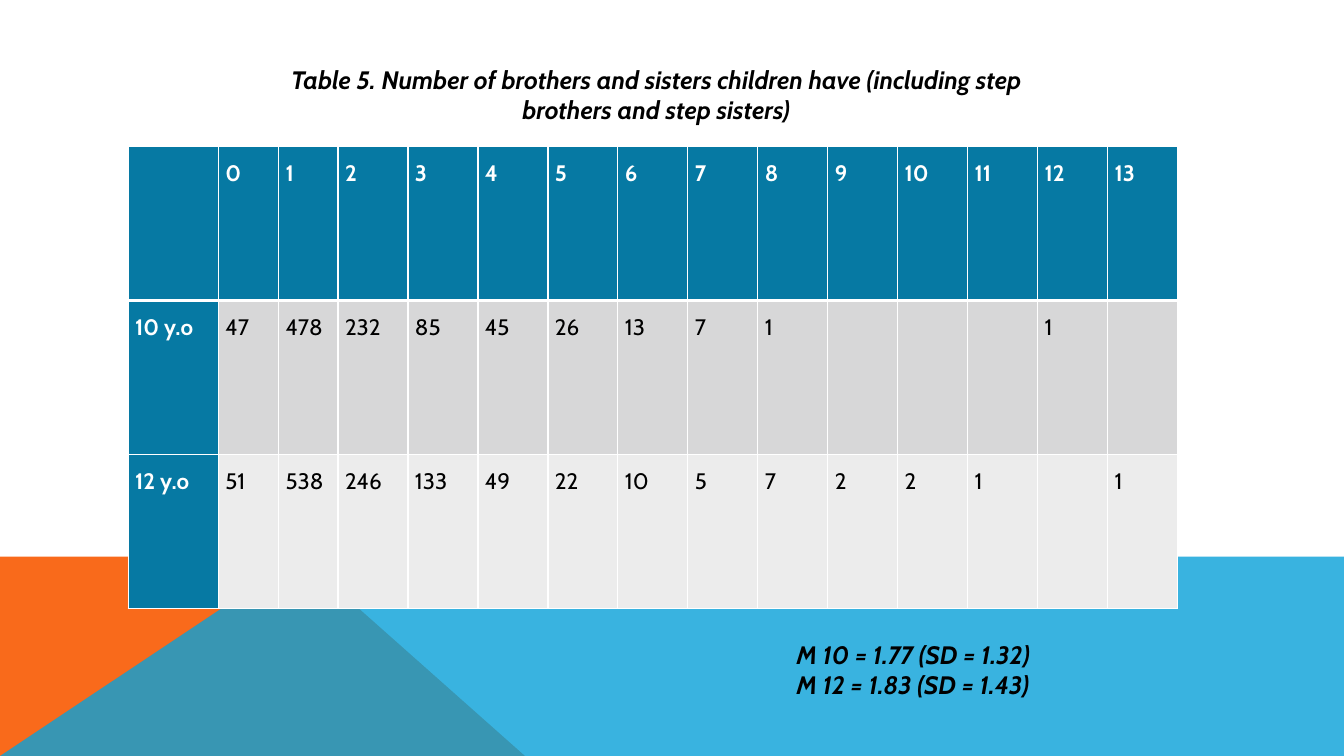
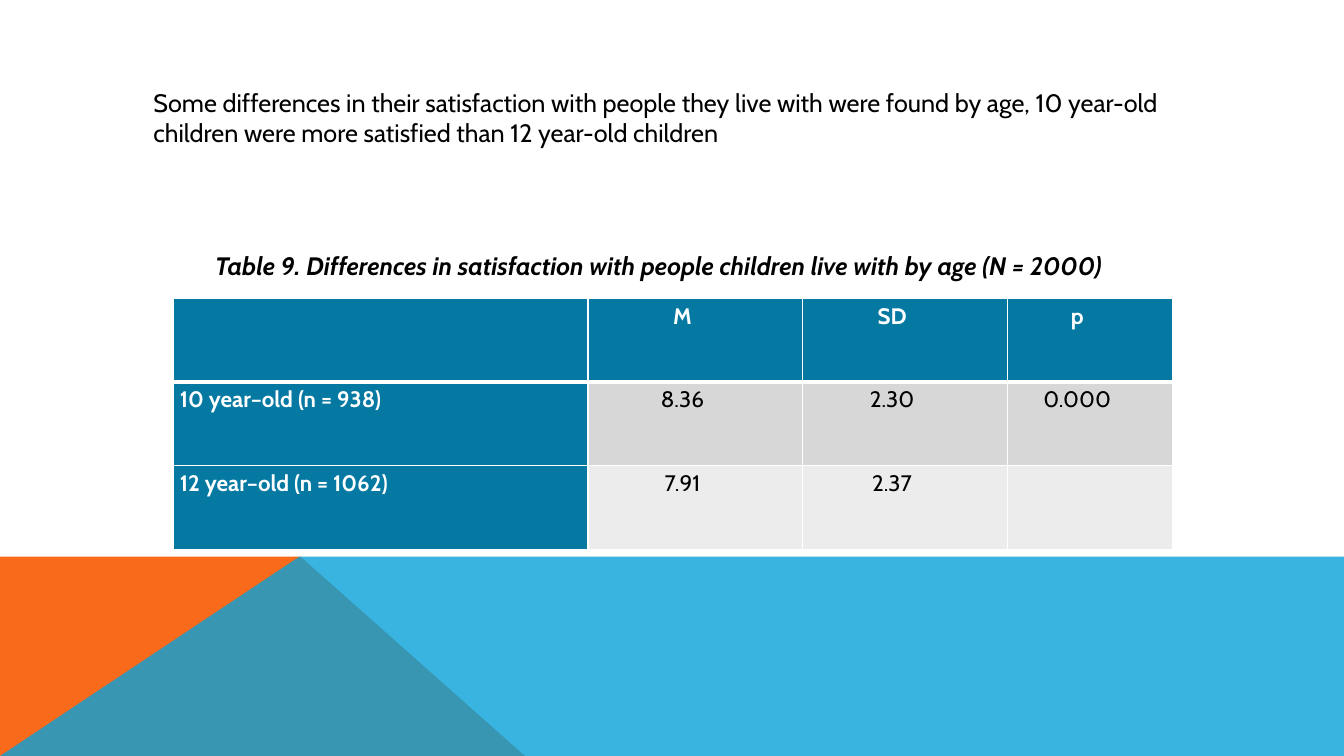
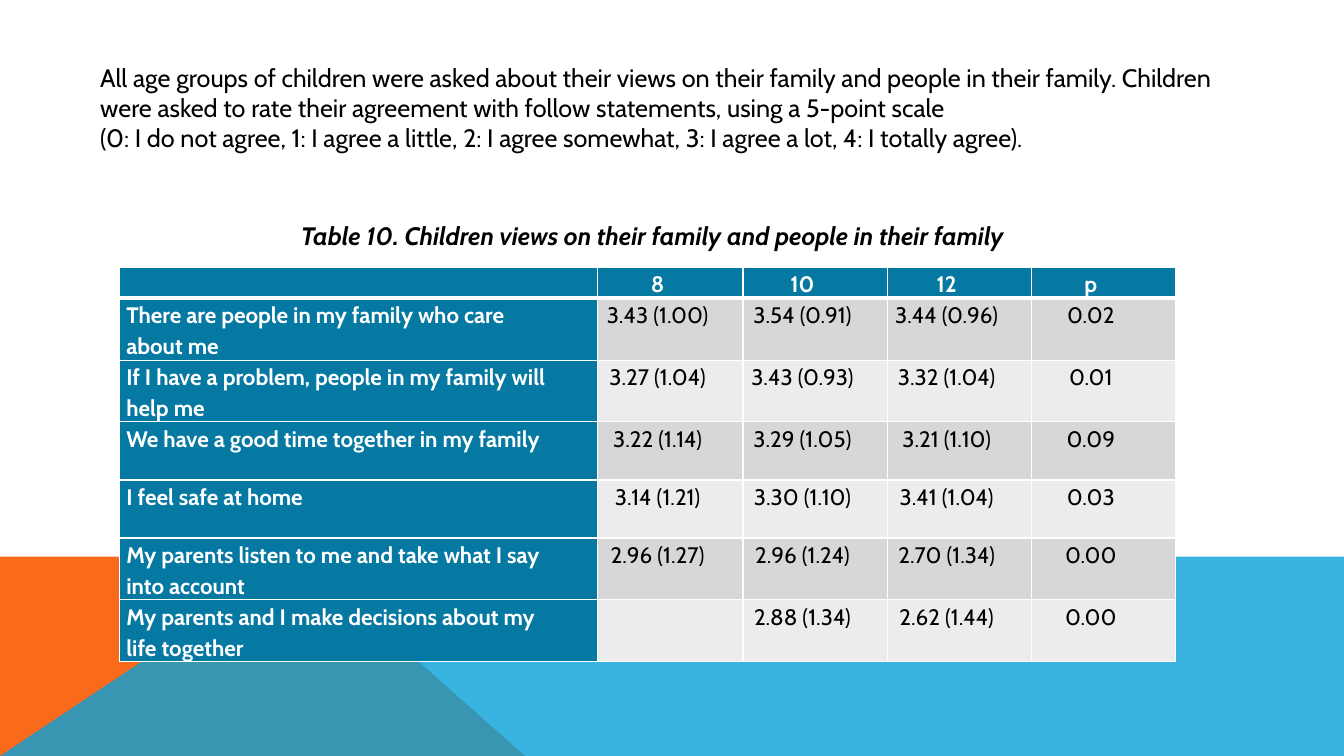
from lxml import etree
from pptx import Presentation
from pptx.dml.color import RGBColor
from pptx.enum.text import MSO_ANCHOR, MSO_AUTO_SIZE, PP_ALIGN
from pptx.oxml.ns import qn
from pptx.util import Pt

BLACK = RGBColor(0x00, 0x00, 0x00)
WHITE = RGBColor(0xFF, 0xFF, 0xFF)
ORANGE = RGBColor(0xF9, 0x6A, 0x1B)
SKY = RGBColor(0x08, 0xA1, 0xD9)
TEAL = RGBColor(0x06, 0x79, 0xA3)
ROW_FILLS = (RGBColor(0xD7, 0xD7, 0xD8), RGBColor(0xEC, 0xEC, 0xEC))

PAGE_WIDTH, PAGE_HEIGHT, BAND_TOP = 960, 540, 397.5
ORANGE_BAND = [(0, PAGE_HEIGHT), (0, BAND_TOP), (214.5, BAND_TOP), (375, PAGE_HEIGHT)]
SKY_BAND = [(0, PAGE_HEIGHT), (214, BAND_TOP), (PAGE_WIDTH, BAND_TOP),
            (PAGE_WIDTH, PAGE_HEIGHT)]


class Deck:
    """Holds the shared style and the current slide."""

    font = "Cabin"
    text_size = 18
    cell_size = 16

    def __init__(self):
        self.presentation = Presentation()
        self.presentation.slide_width = Pt(PAGE_WIDTH)
        self.presentation.slide_height = Pt(PAGE_HEIGHT)
        self.layout = self.presentation.slide_layouts[5]
        self.slide = None

    def new_slide(self):
        self.slide = self.presentation.slides.add_slide(self.layout)

    def layout_band(self, points, color, opacity=100):
        """Draw a polygon and move it to the layout, so every slide shows it."""
        corners = [(Pt(x), Pt(y)) for x, y in points]
        builder = self.slide.shapes.build_freeform(*corners[0])
        builder.add_line_segments(corners[1:], close=True)
        shape = builder.convert_to_shape()
        shape.shadow.inherit = False
        shape.line.fill.background()
        shape.fill.solid()
        shape.fill.fore_color.rgb = color
        if opacity < 100:
            fill_color = shape.element.spPr.find(qn("a:solidFill"))[0]
            etree.SubElement(fill_color, qn("a:alpha"), val=str(opacity * 1000))
        self.layout.shapes.element.append(shape.element)

    def format_runs(self, paragraph, size, color=BLACK, bold=False, italic=False):
        for run in paragraph.runs:
            run.font.name = self.font
            run.font.size = Pt(size)
            run.font.color.rgb = color
            run.font.bold = bold
            run.font.italic = italic

    def fill_text(self, shape, text, align, emphasis):
        text_frame = shape.text_frame
        text_frame.text = text
        text_frame.word_wrap = True
        text_frame.vertical_anchor = MSO_ANCHOR.TOP
        text_frame.auto_size = MSO_AUTO_SIZE.SHAPE_TO_FIT_TEXT
        for paragraph in text_frame.paragraphs:
            paragraph.alignment = align
            self.format_runs(paragraph, self.text_size, bold=emphasis, italic=emphasis)

    def caption(self, text, left, top, width, height, align=PP_ALIGN.CENTER):
        title = self.slide.shapes.title
        title.left, title.top = Pt(left), Pt(top)
        title.width, title.height = Pt(width), Pt(height)
        self.fill_text(title, text, align, emphasis=True)

    def text(self, text, left, top, width, height, emphasis=False):
        box = self.slide.shapes.add_textbox(Pt(left), Pt(top), Pt(width), Pt(height))
        self.fill_text(box, text, PP_ALIGN.LEFT, emphasis)

    def table(self, rows, left, top, widths, heights, align=PP_ALIGN.CENTER,
              line_spacing=1.15, space_before=0.6, right_indent=18):
        table = self.slide.shapes.add_table(
            len(rows), len(widths), Pt(left), Pt(top),
            Pt(sum(widths)), Pt(sum(heights))).table
        table.first_col = True
        for column, width in zip(table.columns, widths):
            column.width = Pt(width)
        for row, height in zip(table.rows, heights):
            row.height = Pt(height)
        for row_index, values in enumerate(rows):
            for column_index, value in enumerate(values):
                cell = table.cell(row_index, column_index)
                is_heading = row_index == 0 or column_index == 0
                cell.margin_left = cell.margin_right = Pt(5)
                cell.margin_top = cell.margin_bottom = 0
                cell.fill.solid()
                cell.fill.fore_color.rgb = (
                    TEAL if is_heading else ROW_FILLS[(row_index - 1) % 2])
                self.cell_borders(cell, row_index)
                if not value:
                    continue
                cell.text_frame.text = value
                paragraph = cell.text_frame.paragraphs[0]
                paragraph.alignment = align if column_index else PP_ALIGN.LEFT
                paragraph.line_spacing = line_spacing
                paragraph.space_before = Pt(space_before)
                paragraph._p.get_or_add_pPr().set("marR", str(Pt(right_indent)))
                self.format_runs(paragraph, self.cell_size,
                                 WHITE if is_heading else BLACK, bold=is_heading)

    def cell_borders(self, cell, row_index):
        """White grid lines, with a thick one below the header row."""
        top = 3 if row_index == 1 else 1
        bottom = 3 if row_index == 0 else 1
        sides = (("lnL", 1), ("lnR", 1), ("lnT", top), ("lnB", bottom))
        properties = cell._tc.get_or_add_tcPr()
        for position, (side, width) in enumerate(sides):
            line = etree.Element(qn(f"a:{side}"), w=str(Pt(width)))
            fill = etree.SubElement(line, qn("a:solidFill"))
            etree.SubElement(fill, qn("a:srgbClr"), val=str(WHITE))
            properties.insert(position, line)


def main():
    deck = Deck()

    # Number of siblings
    deck.new_slide()
    deck.layout_band(ORANGE_BAND, ORANGE)
    deck.layout_band(SKY_BAND, SKY, opacity=80)
    deck.caption("Table 5. Number of brothers and sisters children have "
                 "(including step brothers and step sisters)", 188, 42.5, 561.5, 51)
    sibling_rows = [
        [""] + [str(count) for count in range(14)],
        ["10 y.o", "47", "478", "232", "85", "45", "26", "13", "7", "1",
         "", "", "", "1", ""],
        ["12 y.o", "51", "538", "246", "133", "49", "22", "10", "5", "7",
         "2", "2", "1", "", "1"],
    ]
    deck.table(sibling_rows, 91.5, 104.75, [64.5, 43, 42.5] + [50] * 12, [110] * 3,
               align=PP_ALIGN.LEFT, line_spacing=1.5, space_before=0, right_indent=0)
    deck.text("M 10 = 1.77 (SD = 1.32)\nM 12 = 1.83 (SD = 1.43)",
              562, 453, 353, 51, emphasis=True)

    # Satisfaction by age
    deck.new_slide()
    deck.text("Some differences in their satisfaction with people they live with were "
              "found by age, 10 year-old children were more satisfied than 12 year-old "
              "children", 102.5, 59, 754, 51)
    deck.caption("Table 9. Differences in satisfaction with people children live with "
                 "by age (N = 2000)", 146.5, 175, 666, 29, align=PP_ALIGN.LEFT)
    satisfaction_rows = [
        ["", "M", "SD", "p"],
        ["10 year–old (n = 938)", "8.36", "2.30", "0.000"],
        ["12 year–old (n = 1062)", "7.91", "2.37", ""],
    ]
    deck.table(satisfaction_rows, 123.5, 213.25, [296.5, 153, 146.5, 118], [59.75] * 3)

    # Views on the family
    deck.new_slide()
    deck.text("All age groups of children were asked about their views on their family "
              "and people in their family. Children were asked to rate their agreement "
              "with follow statements, using a 5-point scale\n"
              "(0: I do not agree, 1: I agree a little, 2: I agree somewhat, "
              "3: I agree a lot, 4: I totally agree).", 64.5, 41, 821.5, 72.5)
    deck.caption("Table 10. Children views on their family and people in their family",
                 93, 153.5, 746, 29)
    family_rows = [
        ["", "8", "10", "12", "p"],
        ["There are people in my family who care about me",
         "3.43 (1.00)", "3.54 (0.91)", "3.44 (0.96)", "0.02"],
        ["If I have a problem, people in my family will help me",
         "3.27 (1.04)", "3.43 (0.93)", "3.32 (1.04)", "0.01"],
        ["We have a good time together in my family",
         "3.22 (1.14)", "3.29 (1.05)", "3.21 (1.10)", "0.09"],
        ["I feel safe at home",
         "3.14 (1.21)", "3.30 (1.10)", "3.41 (1.04)", "0.03"],
        ["My parents listen to me and take what I say into account",
         "2.96 (1.27)", "2.96 (1.24)", "2.70 (1.34)", "0.00"],
        ["My parents and I make decisions about my life together",
         "", "2.88 (1.34)", "2.62 (1.44)", "0.00"],
    ]
    deck.table(family_rows, 85.25, 191, [341.5, 104] + [103] * 3, [21] + [41.5] * 6)

    deck.presentation.save("out.pptx")


if __name__ == "__main__":
    main()
